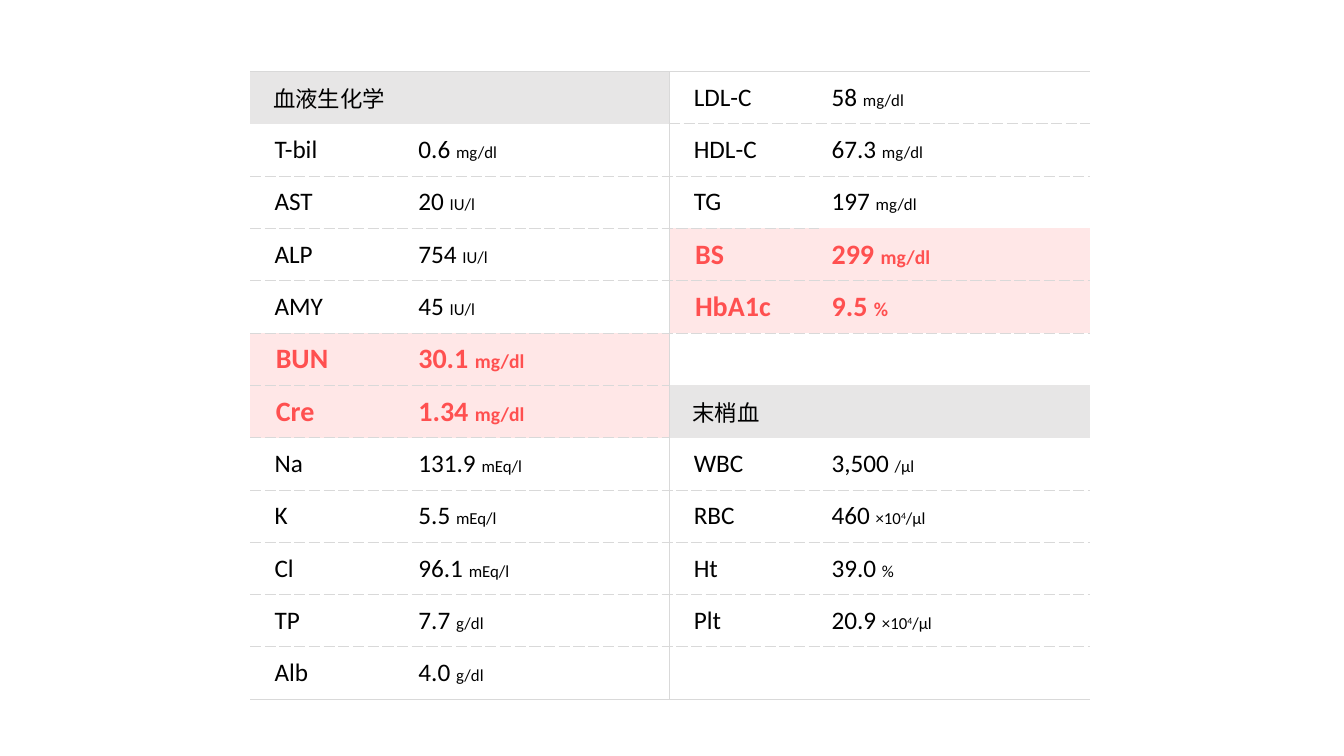
"""Build a slide with a table of blood test results."""
import pptx
import pptx.dml.color
import pptx.enum.text
import pptx.oxml.ns
import pptx.util
from lxml import etree

COLORS = {"text": "000000", "alert": "FF5050", "alert_fill": "FFE7E7",
          "header_fill": "E7E6E6", "rule": "D9D9D9"}

LEFT_PANEL = [
    ("header", "血液生化学"),
    ("normal", "T-bil", "0.6", "mg/dl"),
    ("normal", "AST", "20", "IU/l"),
    ("normal", "ALP", "754", "IU/l"),
    ("normal", "AMY", "45", "IU/l"),
    ("alert", "BUN", "30.1", "mg/dl"),
    ("alert", "Cre", "1.34", "mg/dl"),
    ("normal", "Na", "131.9", "mEq/l"),
    ("normal", "K", "5.5", "mEq/l"),
    ("normal", "Cl", "96.1", "mEq/l"),
    ("normal", "TP", "7.7", "g/dl"),
    ("normal", "Alb", "4.0", "g/dl"),
]
RIGHT_PANEL = [
    ("normal", "LDL-C", "58", "mg/dl"),
    ("normal", "HDL-C", "67.3", "mg/dl"),
    ("normal", "TG", "197", "mg/dl"),
    ("alert", "BS", "299", "mg/dl"),
    ("alert", "HbA1c", "9.5", "%"),
    ("empty",),
    ("header", "末梢血"),
    ("normal", "WBC", "3,500", "/μl"),
    ("normal", "RBC", "460", "×10", "4", "/μl"),
    ("normal", "Ht", "39.0", "%"),
    ("normal", "Plt", "20.9", "×10", "4", "/μl"),
    ("empty",),
]
PANELS = (LEFT_PANEL, RIGHT_PANEL)
UNRULED_EDGES = {(3, 3)}

STYLES = {
    "header": {"size": 16, "unit": 12, "bold": False, "color": "text",
               "font": "Noto Sans CJK JP", "fill": "header_fill", "indent": 16.5},
    "normal": {"size": 18, "unit": 12, "bold": False, "color": "text",
               "font": "Calibri", "fill": None, "indent": 17.5},
    "alert": {"size": 20, "unit": 14, "bold": True, "color": "alert",
              "font": "Calibri", "fill": "alert_fill", "indent": 18.4},
}
STYLES["empty"] = STYLES["normal"]

SLIDE_SIZE = (960, 540)
TABLE_LEFT, TABLE_TOP = 178.6, 51.1
COLUMN_WIDTHS = (110.9, 188.6, 106.6, 193.7)
ROW_COUNT = len(LEFT_PANEL)
ROW_HEIGHT = 37.38
CELL_MARGIN = 9.36

Pt = pptx.util.Pt
qn = pptx.oxml.ns.qn


def rgb(name):
    return pptx.dml.color.RGBColor.from_string(COLORS[name])


def add_run(paragraph, text, style, size, baseline=0):
    run = paragraph.add_run()
    run.text = text
    formats = {"size": Pt(size), "bold": style["bold"], "name": style["font"]}
    for attribute, value in formats.items():
        setattr(run.font, attribute, value)
    run.font.color.rgb = rgb(style["color"])
    properties = run.font._element
    etree.SubElement(properties, qn("a:ea")).set("typeface", style["font"])
    if baseline:
        properties.set("baseline", str(baseline * 1000))


def edge_dash(panel, edge, column):
    """Return the dash of the horizontal rule above row number edge, or None."""
    if edge in (0, ROW_COUNT):
        return "solid"
    beside_header = "header" in (panel[edge - 1][0], panel[edge][0])
    return None if beside_header or (edge, column) in UNRULED_EDGES else "sysDash"


def draw_borders(cell, dashes):
    properties = cell._tc.get_or_add_tcPr()
    for side, dash in zip("LRTB", dashes):
        line = etree.SubElement(properties, qn("a:ln" + side))
        line.set("w", str(int(Pt(0.75))))
        if dash is None:
            etree.SubElement(line, qn("a:noFill"))
            continue
        fill = etree.SubElement(line, qn("a:solidFill"))
        etree.SubElement(fill, qn("a:srgbClr")).set("val", COLORS["rule"])
        etree.SubElement(line, qn("a:prstDash")).set("val", dash)


def fill_cell(cell, panel, row, column):
    kind, *texts = panel[row]
    style = STYLES[kind]
    is_name = column % 2 == 0
    formats = {"margin_left": Pt(style["indent"] if is_name else CELL_MARGIN),
               "margin_right": Pt(CELL_MARGIN),
               "margin_top": Pt(4.32), "margin_bottom": Pt(4.32),
               "vertical_anchor": pptx.enum.text.MSO_ANCHOR.MIDDLE}
    for attribute, value in formats.items():
        setattr(cell, attribute, value)
    draw_borders(cell, ("solid" if column == 2 else None,
                        "solid" if column == 1 else None,
                        edge_dash(panel, row, column),
                        edge_dash(panel, row + 1, column)))
    if style["fill"]:
        cell.fill.solid()
        cell.fill.fore_color.rgb = rgb(style["fill"])
    else:
        cell.fill.background()
    paragraph = cell.text_frame.paragraphs[0]
    if is_name and texts:
        add_run(paragraph, texts[0], style, style["size"])
    elif len(texts) > 1:
        add_run(paragraph, texts[1] + " ", style, style["size"])
        for text, baseline in zip(texts[2:], (0, 30, 0)):
            add_run(paragraph, text, style, style["unit"], baseline)


def main():
    presentation = pptx.Presentation()
    presentation.slide_width, presentation.slide_height = map(Pt, SLIDE_SIZE)
    slide = presentation.slides.add_slide(presentation.slide_layouts[6])
    table = slide.shapes.add_table(
        ROW_COUNT, len(COLUMN_WIDTHS), Pt(TABLE_LEFT), Pt(TABLE_TOP),
        Pt(sum(COLUMN_WIDTHS)), Pt(ROW_COUNT * ROW_HEIGHT)).table
    table.first_row = table.horz_banding = False
    for column, width in enumerate(COLUMN_WIDTHS):
        table.columns[column].width = Pt(width)
        for row in range(ROW_COUNT):
            table.rows[row].height = Pt(ROW_HEIGHT)
            fill_cell(table.cell(row, column), PANELS[column // 2], row, column)
    presentation.save("out.pptx")


if __name__ == "__main__":
    main()
